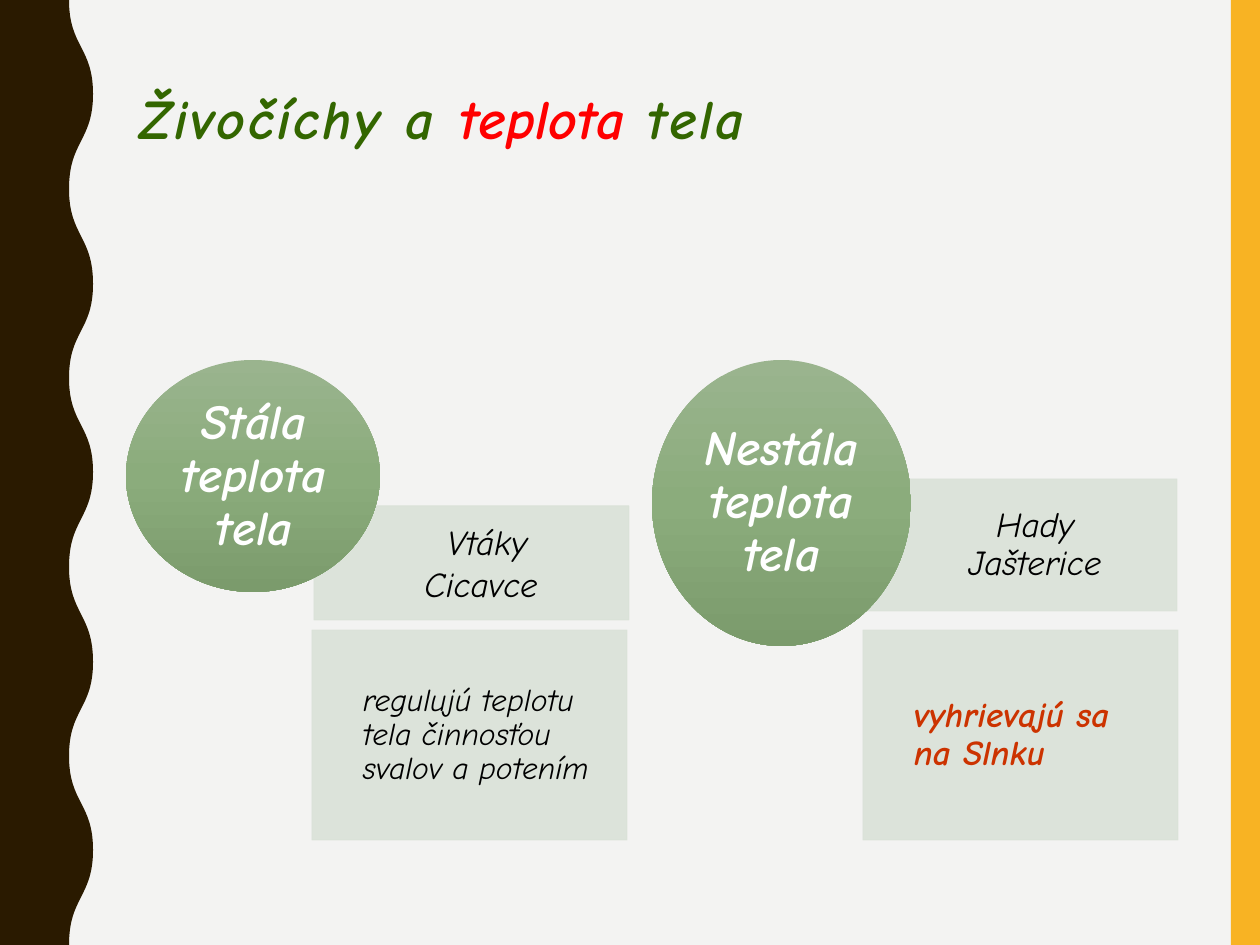
from copy import deepcopy

from lxml.etree import SubElement
from pptx import Presentation
from pptx.dml.color import RGBColor
from pptx.enum.shapes import MSO_SHAPE as Kind
from pptx.enum.text import MSO_ANCHOR as Anchor, PP_ALIGN as Align
from pptx.oxml.ns import qn
from pptx.util import Emu, Pt

PAPER = RGBColor(0xF3, 0xF3, 0xF2)
GOLD = RGBColor(0xF8, 0xB3, 0x23)
BROWN = RGBColor(0x2A, 0x1A, 0x00)
GREEN = RGBColor(0x33, 0x66, 0x00)
RED = RGBColor(0xFF, 0x00, 0x00)
RUST = RGBColor(0xCC, 0x33, 0x00)
BLACK = RGBColor(0, 0, 0)
WHITE = RGBColor(0xFF, 0xFF, 0xFF)
PALE = RGBColor(0xDA, 0xE2, 0xD8)
LEAVES = [RGBColor(0x9A, 0xB4, 0x8E), RGBColor(0x8B, 0xAC, 0x7C),
          RGBColor(0x7B, 0x9B, 0x6C)]
FONT = "Comic Neue"
SCALE = 914400 / 126
WIDE, HIGH = 1260, 945


def px(*nums):
    return [Emu(round(n * SCALE)) for n in nums]


def write(box, lines, size, color, bold, align, gap, pad):
    frame = shapes.add_textbox(*px(*box)).text_frame
    inset, = px(pad)
    look = {"word_wrap": True, "vertical_anchor": Anchor.MIDDLE,
            "margin_left": 0, "margin_top": inset,
            "margin_right": inset, "margin_bottom": inset}
    for name, value in look.items():
        setattr(frame, name, value)
    frame.text = "\n".join(lines)
    for para in frame.paragraphs:
        para.alignment, para.line_spacing = align, gap
        font = para.runs[0].font
        font.color.rgb = color
        form = {"name": FONT, "size": Pt(size), "bold": bold, "italic": True}
        for name, value in form.items():
            setattr(font, name, value)


deck = Presentation()
deck.slide_width, deck.slide_height = px(WIDE, HIGH)
slide = deck.slides.add_slide(deck.slide_layouts[6])
slide.background.fill.solid()
slide.background.fill.fore_color.rgb = PAPER
shapes = slide.shapes

# Gold bar on the right, brown edge with ten bends on the left
bar = shapes.add_shape(Kind.RECTANGLE, *px(1231, 0, 29, HIGH))
TURNS, NEAR, FAR = 10, 69, 93
bends = [(FAR if n % 2 else NEAR, round(HIGH * n / TURNS))
         for n in range(TURNS + 1)]
pen = shapes.build_freeform(0, 0, scale=SCALE)
pen.add_line_segments(bends + [(0, HIGH)])
edge = pen.convert_to_shape()
sides = list(edge._element.spPr.iter(qn("a:lnTo")))[1:TURNS + 1]
for side, (x0, y0), (x1, y1) in zip(sides, bends, bends[1:]):
    side.tag = qn("a:cubicBezTo")
    end = side[0]
    for x in (x0, x1):
        bend = deepcopy(end)
        bend.set("x", str(x))
        bend.set("y", str((y0 + y1) // 2))
        end.addprevious(bend)
for shape, color in ((bar, GOLD), (edge, BROWN)):
    shape.shadow.inherit = False
    shape.fill.solid()
    shape.fill.fore_color.rgb = color
    shape.line.fill.background()

# Title
title = shapes.add_textbox(*px(127, 85, 1133, 158))
title.text_frame.word_wrap = True
para = title.text_frame.paragraphs[0]
para.line_spacing = 0.9
for text, color, track in (("Živočíchy a ", GREEN, 150),
                           ("teplota", RED, 0), (" tela", GREEN, 150)):
    run = para.add_run()
    run.text = text
    form = {"name": FONT, "size": Pt(32), "bold": True, "italic": True}
    for name, value in form.items():
        setattr(run.font, name, value)
    run.font.color.rgb = color
    run.font._element.set("spc", str(track))

# Each group: two pale cards, then a green circle
groups = [
    ([((314, 506, 315, 114), ["Vtáky", "Cicavce "], 20, BLACK, False,
       Align.CENTER, 1.0, 20),
      ((312, 630, 315, 210),
       ["regulujú teplotu tela činnosťou svalov a potením"],
       18, BLACK, False, Align.LEFT, 0.9, 18)],
     (126, 360, 254, 232), (164, 395, 180, 164), "Stála teplota tela"),
    ([((862, 479, 315, 132), ["Hady", "Jašterice"], 20, BLACK, False,
       Align.CENTER, 0.9, 20),
      ((863, 630, 315, 210), ["vyhrievajú sa na Slnku"], 20, RUST, True,
       Align.LEFT, 0.9, 20)],
     (652, 360, 259, 286), (690, 402, 183, 202), "Nestála teplota tela"),
]
INDENT = 51
for cards, oval, inner, label in groups:
    for box, *words in cards:
        left, top, width, height = box
        card = shapes.add_shape(Kind.RECTANGLE, *px(*box))
        card.shadow.inherit = False
        card.line.width = Pt(0.5)
        for paint in (card.fill, card.line.fill):
            paint.solid()
            paint.fore_color.rgb = PALE
        for tint in card._element.spPr.iter(qn("a:srgbClr")):
            SubElement(tint, qn("a:alpha"), val="90000")
        write((left + INDENT, top, width - INDENT, height), *words)

    disc = shapes.add_shape(Kind.OVAL, *px(*oval))
    disc.shadow.inherit = False
    disc.line.fill.background()
    disc.fill.gradient()
    disc.fill.gradient_angle = 270
    first = disc._element.spPr.find(".//" + qn("a:gs"))
    first.addnext(deepcopy(first))
    for place, (stop, color) in enumerate(zip(disc.fill.gradient_stops, LEAVES)):
        stop.position = place / 2
        stop.color.rgb = color
    write(inner, [label], 28, WHITE, True, Align.CENTER, 0.9, 0)

deck.save("out.pptx")
